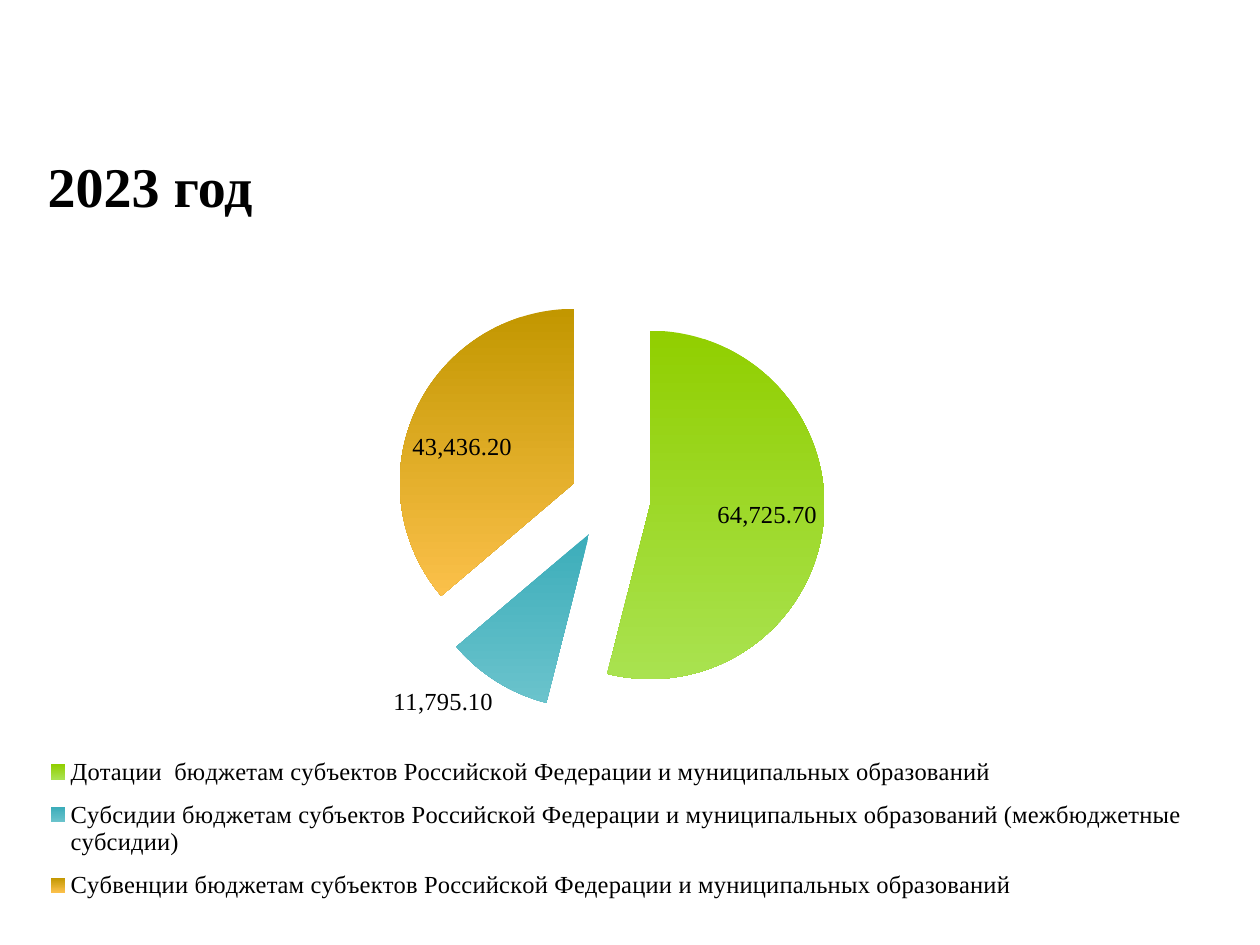
from lxml.etree import SubElement
from pptx import Presentation
from pptx.chart.data import CategoryChartData
from pptx.dml.color import RGBColor
from pptx.enum.chart import XL_CHART_TYPE, XL_LABEL_POSITION, XL_LEGEND_POSITION
from pptx.oxml import parse_xml
from pptx.oxml.ns import nsdecls, qn
from pptx.util import Pt

COLORS = {
    "text": "000000",
    "grants": ("91CF00", "A9E250"),
    "subsidies": ("3CADBA", "6AC3CC"),
    "subventions": ("C29700", "FBC04A"),
}
TRANSFERS = {
    "grants": ("Дотации  бюджетам субъектов Российской Федерации и муниципальных образований", 64725.7),
    "subsidies": (
        "Субсидии бюджетам субъектов Российской Федерации и муниципальных образований "
        "(межбюджетные субсидии)",
        11795.1,
    ),
    "subventions": ("Субвенции бюджетам субъектов Российской Федерации и муниципальных образований", 43436.2),
}


class SlideBuilder:
    """Holds the text style and the current slide."""

    font_name = "Times New Roman"

    def __init__(self, page):
        self.page = page

    def style(self, font, size, bold=False):
        font.name = self.font_name
        font.size = Pt(size)
        font.bold = bold
        font.color.rgb = RGBColor.from_string(COLORS["text"])

    def title(self, text, left, top, width, height):
        box = self.page.shapes.add_textbox(Pt(left), Pt(top), Pt(width), Pt(height))
        box.text_frame.word_wrap = True
        box.text_frame.text = text
        self.style(box.text_frame.paragraphs[0].runs[0].font, 32, bold=True)

    def layout(self, parent, x, y, w, h, inner=False):
        for old in parent.findall(qn("c:layout")):
            parent.remove(old)
        layout = parse_xml(f"<c:layout {nsdecls('c')}><c:manualLayout/></c:layout>")
        values = {"layoutTarget": "inner"} if inner else {}
        values |= {"xMode": "edge", "yMode": "edge", "x": x, "y": y, "w": w, "h": h}
        for name, value in values.items():
            SubElement(layout[0], qn(f"c:{name}")).set("val", str(value))
        parent.insert(0 if inner else 1, layout)

    def pie(self, transfers, left, top, width, height):
        data = CategoryChartData(number_format="#,##0.00")
        data.categories = [name for name, _ in transfers.values()]
        data.add_series("Series 1", [value for _, value in transfers.values()])
        chart = self.page.shapes.add_chart(
            XL_CHART_TYPE.PIE, Pt(left), Pt(top), Pt(width), Pt(height), data
        ).chart
        self.style(chart.font, 14)
        chart.has_title = False
        chart.has_legend = True
        chart.legend.position = XL_LEGEND_POSITION.BOTTOM
        chart.legend.include_in_layout = False
        plot = chart.plots[0]
        plot.vary_by_categories = True
        plot.has_data_labels = True
        labels = plot.data_labels
        labels.show_value = True
        labels.show_percentage = False
        labels.number_format = "#,##0.00"
        labels.number_format_is_linked = False
        labels.position = XL_LABEL_POSITION.BEST_FIT
        series = plot.series[0]
        explosion = parse_xml(f"<c:explosion {nsdecls('c')} val='23'/>")
        series._element.find(qn("c:tx")).addnext(explosion)
        for index, key in enumerate(transfers):
            fill = series.points[index].format.fill
            fill.gradient()
            fill.gradient_angle = 270
            for stop, color in zip(fill.gradient_stops, COLORS[key]):
                stop.color.rgb = RGBColor.from_string(color)
        self.layout(chart._chartSpace.chart.plotArea, 0.01, 0.1, 0.98, 0.6, inner=True)
        self.layout(chart.legend._element, 0.02, 0.74, 0.97, 0.24)


def main():
    deck = Presentation()
    deck.slide_width, deck.slide_height = Pt(720), Pt(540)
    builder = SlideBuilder(deck.slides.add_slide(deck.slide_layouts[6]))
    builder.pie(TRANSFERS, 8.64, 122.4, 680.4, 408.24)
    builder.title("2023 год", 20.16, 82.8, 209.52, 46.08)
    deck.save("out.pptx")


if __name__ == "__main__":
    main()
